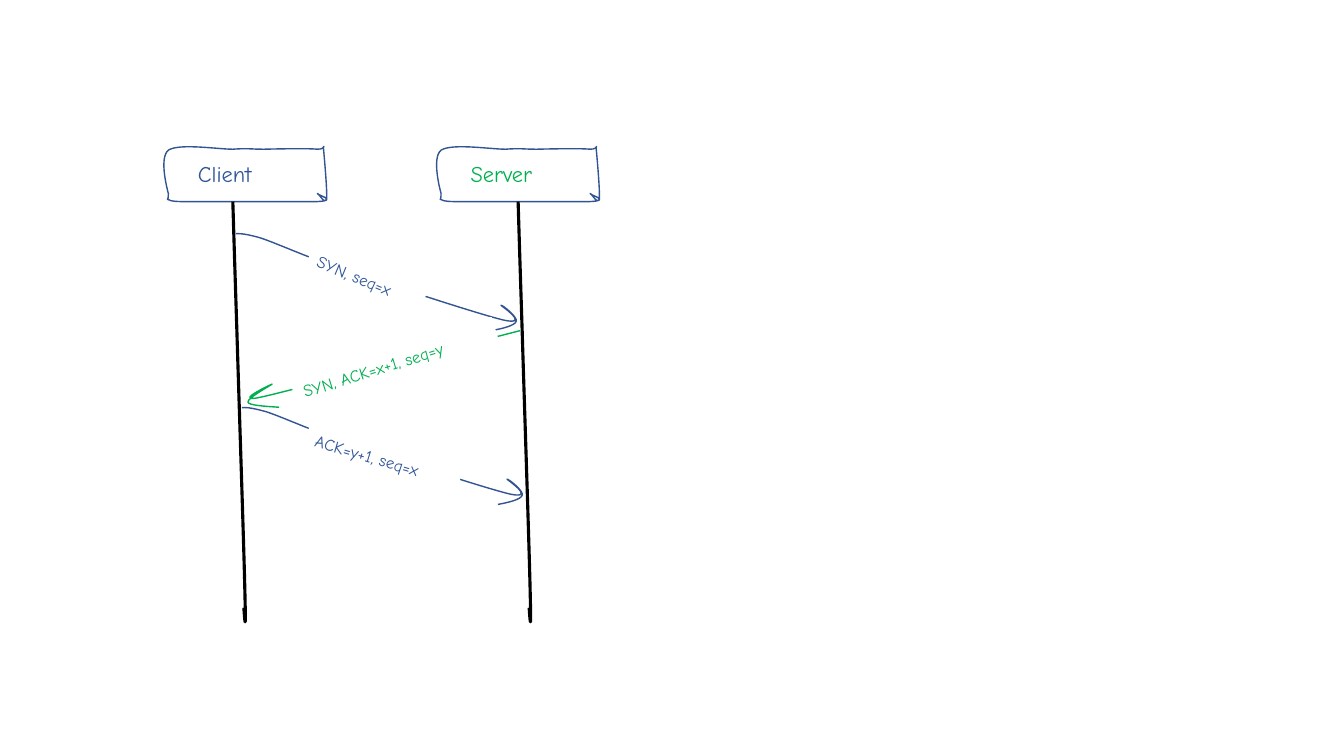
"""Builds a hand-drawn sequence diagram of the TCP three-way handshake."""
from lxml import etree
from pptx import Presentation
from pptx.dml.color import RGBColor
from pptx.enum.shapes import MSO_SHAPE
from pptx.enum.text import MSO_AUTO_SIZE, PP_ALIGN
from pptx.oxml.ns import qn
from pptx.util import Pt

GROW = MSO_AUTO_SIZE.SHAPE_TO_FIT_TEXT
LEFT = PP_ALIGN.LEFT
RECT = MSO_SHAPE.RECTANGLE
FONT = "Comic Neue"
STEPS = 20
COLORS = {"ink": "325491", "blue": "2F5597", "green": "00B050",
          "black": "000000", "white": "FFFFFF"}

BOX = [(2.9, 2.9),
       (-4.3, 8.6), (2.9, 33.8), (2.9, 33.8),
       (2.9, 40.3), (1.4, 37.4), (2.9, 38.2),
       (4.3, 39.6), (11.5, 39.6), (11.5, 39.6),
       (11.5, 39.6), (109.4, 39.6), (109.4, 39.6),
       (125.3, 38.9), (108, 34.6), (109.4, 33.8),
       (110.2, 33.8), (115.2, 42.5), (115.9, 37.4),
       (116.6, 32.4), (113.8, 2.9), (113.8, 2.9),
       (113, -2.9), (116.6, 2.2), (109.4, 2.2),
       (102.2, 1.4), (71.3, 2.2), (71.3, 2.2),
       (61.2, 2.2), (59.8, 1.4), (49, 2.2),
       (38.2, 2.2), (10.8, -2.2), (2.9, 2.9)]
LIFE = [(0, 0),
        (0.7, 23), (1.4, 46.1), (2.9, 92.2),
        (4.3, 139), (7.9, 245.5), (8.6, 277.9),
        (9.4, 311), (8.6, 300.2), (7.9, 290.2)]
SEND = [(0, 0),
        (2.2, 0), (4.3, -0.7), (17.3, 2.9),
        (30.2, 7.2), (48.2, 15.8), (77.8, 25.9),
        (106.6, 35.3), (173.5, 57.6), (192.2, 61.9),
        (210.9, 65.5), (187.9, 50.4), (189.4, 51.1),
        (190.8, 51.1), (201.6, 59.8), (200.2, 62.6),
        (199.4, 65.5), (190.8, 67.7), (182.9, 69.1)]
REPLY = [(194.4, 0),
         (194.4, 0), (110.2, 21.6), (110.2, 21.6),
         (78.5, 29.5), (20.9, 45.4), (5.8, 48.2),
         (-9.4, 50.4), (18.7, 37.4), (17.3, 38.2),
         (16.6, 38.9), (-0.7, 48.2), (0, 51.1),
         (0.7, 53.3), (11.5, 54), (22.3, 54.7)]


def color(name):
    """Return the named colour."""
    return RGBColor.from_string(COLORS[name])


def blend(knots, t):
    """Return the point at t on a cubic Bezier curve."""
    u = 1 - t
    parts = (u ** 3, 3 * u * u * t, 3 * u * t * t, t ** 3)
    return tuple(round(sum(w * k[axis] for w, k in zip(parts, knots)))
                 for axis in (0, 1))


def trace(curve):
    """Return the points along a chain of cubic Bezier curves."""
    return [curve[0]] + [blend(curve[i:i + 4], n / STEPS)
                         for i in range(0, len(curve) - 1, 3)
                         for n in range(1, STEPS + 1)]


def add_step(route, kind, points):
    """Append one drawing step to a path."""
    step = etree.SubElement(route, qn(kind))
    for x, y in points:
        etree.SubElement(step, qn("a:pt"), x=str(x), y=str(y))


def bend(shape, curve, close):
    """Give a freeform true Bezier segments in place of its chords."""
    route = next(shape.element.iter(qn("a:path")))
    for step in list(route):
        route.remove(step)
    spots = [(x - shape.left, y - shape.top) for x, y in curve]
    add_step(route, "a:moveTo", spots[:1])
    for i in range(0, len(spots) - 1, 3):
        start, first, second, end = spots[i:i + 4]
        if first == start and second == end:
            add_step(route, "a:lnTo", [end])
        else:
            add_step(route, "a:cubicBezTo", [first, second, end])
    if close:
        add_step(route, "a:close", [])


def add_stroke(slide, curve, left, top, ink, width=1, close=False):
    """Draw an unfilled sketched outline."""
    curve = [(Pt(left + x), Pt(top + y)) for x, y in curve]
    points = trace(curve)
    draft = slide.shapes.build_freeform(*points[0])
    draft.add_line_segments(points[1:], close=close)
    shape = draft.convert_to_shape()
    bend(shape, curve, close)
    shape.shadow.inherit = False
    shape.fill.background()
    shape.line.color.rgb = color(ink)
    shape.line.width = Pt(width)


def set_text(box, text, size, ink):
    """Put one unwrapped line of text in a box."""
    body = box.text_frame
    body.word_wrap = False
    body.auto_size = GROW
    line = body.paragraphs[0]
    line.text = text
    line.alignment = LEFT
    line.font.name = FONT
    line.font.size = Pt(size)
    line.font.color.rgb = color(ink)


def add_actor(slide, name, left, width, ink):
    """Add a sketched box with its name."""
    add_stroke(slide, BOX, left, 104.4, "ink", close=True)
    box = slide.shapes.add_textbox(Pt(left + 16.9), Pt(110.9),
                                   Pt(width), Pt(26.6))
    set_text(box, name, 16, ink)


def add_note(slide, text, left, top, width, turn, ink):
    """Add a tilted message label that covers its arrow."""
    box = slide.shapes.add_shape(RECT, Pt(left), Pt(top), Pt(width), Pt(21.6))
    box.shadow.inherit = False
    box.rotation = turn
    box.fill.solid()
    box.fill.fore_color.rgb = color("white")
    box.line.fill.background()
    set_text(box, text, 12, ink)


def main():
    """Build the slide and save it."""
    deck = Presentation()
    deck.slide_width, deck.slide_height = Pt(960), Pt(540)
    slide = deck.slides.add_slide(deck.slide_layouts[6])
    add_actor(slide, "Client", 117.4, 66.2, "blue")
    add_actor(slide, "Server", 312.2, 71.3, "green")
    for left in (166.3, 370.1):
        add_stroke(slide, LIFE, left, 144, "black", 2.25)
    for left, top in ((168.5, 167), (172.8, 291.2)):
        add_stroke(slide, SEND, left, top, "ink")
    add_stroke(slide, REPLY, 177.1, 236.2, "green")
    add_note(slide, "SYN, seq=x", 217.4, 189.4, 87.8, 22.4, "blue")
    add_note(slide, "SYN, ACK=x+1, seq=y", 206.6, 248.4, 151.2, 342.6, "green")
    add_note(slide, "ACK=y+1, seq=x", 216.4, 317.9, 113.8, 16.4, "blue")
    deck.save("out.pptx")


if __name__ == "__main__":
    main()
